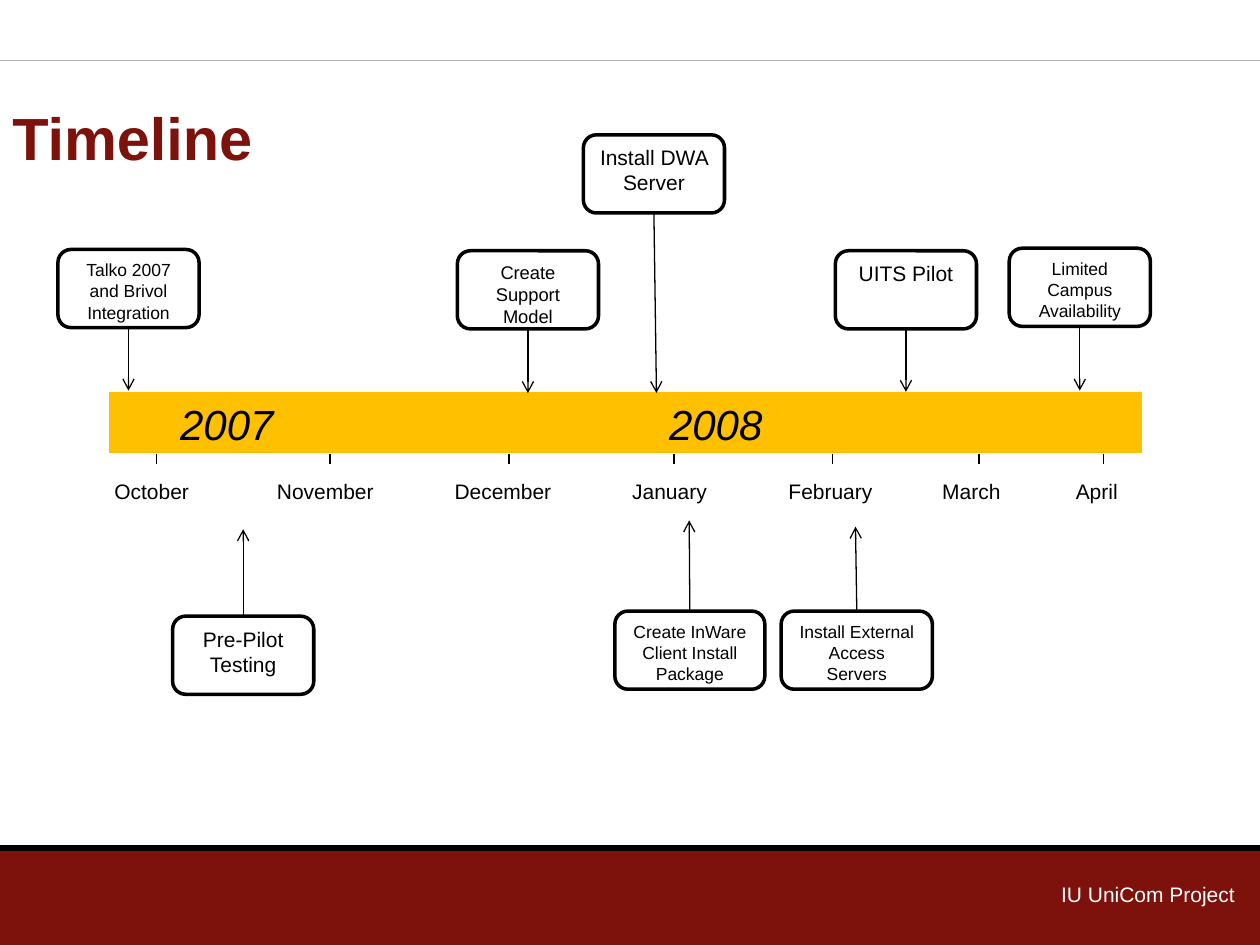
"""Build a project timeline slide on a grid of 100 columns by 75 rows."""
from lxml import etree
from pptx import Presentation
from pptx import util as u
from pptx.dml.color import RGBColor
from pptx.enum import shapes, text
from pptx.oxml.ns import qn

INK = {"maroon": "7D110C", "gold": "FFC000", "black": "000000",
       "white": "FFFFFF", "grey": "B0B2B4"}
WIDE, HIGH = u.Inches(10), u.Inches(7.5)
CELL = WIDE // 100
BOX_W, BOX_H, BAND_TOP, BAND_H = 11.2, 6.2, 31.1, 4.9
ALIGN, ANCHOR = text.PP_ALIGN, text.MSO_ANCHOR
KIND = shapes.MSO_SHAPE

# left, top, width, text size, arrow tip (column, row), lines
CALLS = [
    (4.6, 19.8, BOX_W, 10, (10.2, 31), ["Talko 2007 and Brivol Integration"]),
    (36.3, 19.9, BOX_W, 10.5, (41.9, 31.2), ["Create Support Model"]),
    (46.3, 10.7, BOX_W, 12, (52.1, 31.2), ["Install DWA Server"]),
    (80.1, 19.7, BOX_W, 10, (85.7, 31), ["Limited Campus Availability"]),
    (66.3, 19.9, BOX_W, 12, (71.9, 31.1), ["UITS Pilot"]),
    (13.7, 48.9, BOX_W, 12, (19.3, 42), ["Pre-Pilot", "Testing"]),
    (62, 48.5, 12, 10, (67.9, 41.8), ["Install External", "Access Servers"]),
    (48.8, 48.5, 11.9, 10, (54.7, 41.3),
     ["Create InWare", "Client Install", "Package"]),
]
MONTHS = ["October", "November", "December", "January", "February", "March", "April"]
STOPS = [12.9, 27, 41.1, 53.5, 65.7, 76.3]
TICKS = [12.4, 26.2, 40.4, 53.5, 66.1, 77.7, 87.6]


def cells(*nums):
    """Turn grid counts into lengths."""
    return [u.Emu(round(n * CELL)) for n in nums]


def tint(name):
    """Return a named colour."""
    return RGBColor.from_string(INK[name])


def write(shape, lines, size, color="black", align=ALIGN.LEFT,
          anchor=ANCHOR.TOP, stops=(), bold=False, slant=False):
    """Fill a shape with paragraphs of one style."""
    frame = shape.text_frame
    frame.word_wrap = True
    frame.vertical_anchor = anchor
    for i, line in enumerate(lines):
        para = frame.add_paragraph() if i else frame.paragraphs[0]
        para.alignment = align
        if stops:
            tabs = etree.SubElement(para._p.get_or_add_pPr(), qn("a:tabLst"))
            for pos in cells(*stops):
                etree.SubElement(tabs, qn("a:tab"), pos=str(pos), algn="l")
        run = para.add_run()
        run.text = line
        font = run.font
        font.name, font.size = "Arial", u.Pt(size)
        font.bold, font.italic = bold, slant
        font.color.rgb = tint(color)


def block(slide, kind, at, fill, edge=None, width=0.75):
    """Add a filled shape with an optional outline."""
    shape = slide.shapes.add_shape(kind, *cells(*at))
    shape.shadow.inherit = False
    shape.fill.solid()
    shape.fill.fore_color.rgb = tint(fill)
    if edge:
        shape.line.color.rgb = tint(edge)
        shape.line.width = u.Pt(width)
    else:
        shape.line.fill.background()
    return shape


def rule(slide, start, end, color="black", width=0.75, arrow=False):
    """Add a straight line, with an arrowhead at its end if asked."""
    line = slide.shapes.add_connector(
        shapes.MSO_CONNECTOR.STRAIGHT, *cells(*start, *end))
    line.line.color.rgb = tint(color)
    line.line.width = u.Pt(width)
    if arrow:
        etree.SubElement(line.line._get_or_add_ln(), qn("a:tailEnd"), type="arrow")
    etree.SubElement(line._element.spPr, qn("a:effectLst"))
    return line


def label(slide, at, line, size, **style):
    """Add a text box of one line."""
    write(slide.shapes.add_textbox(*cells(*at)), [line], size, **style)


def call(slide, left, top, wide, size, tip, lines):
    """Add a rounded box joined to an arrow that points at the timeline."""
    box = block(slide, KIND.ROUNDED_RECTANGLE, (left, top, wide, BOX_H),
                "white", "black", 2)
    write(box, lines, size, align=ALIGN.CENTER)
    below = top < BAND_TOP
    start = (left + wide / 2, top + BOX_H * below)
    rule(slide, start, tip, arrow=True).begin_connect(box, 2 if below else 0)


def axis(slide):
    """Add the year band, the month names and the ticks."""
    band = block(slide, KIND.RECTANGLE, (8.6, BAND_TOP, 82.1, BAND_H),
                 "gold", "white")
    band.text_frame.margin_left = cells(5.7)[0]
    write(band, ["2007\t2008"], 24, stops=[38.8], slant=True)
    names = block(slide, KIND.RECTANGLE, (8.1, 37.5, 83.6, 3), "white", "white", 2)
    write(names, ["\t".join(MONTHS)], 12, stops=STOPS)
    low = BAND_TOP + BAND_H
    for col in TICKS:
        rule(slide, (col, low), (col, low + 0.8))


def main():
    """Build and save the slide."""
    deck = Presentation()
    deck.slide_width, deck.slide_height = WIDE, HIGH
    slide = deck.slides.add_slide(deck.slide_layouts[6])
    block(slide, KIND.RECTANGLE, (0, 67.5, 100, 7.5), "maroon")
    rule(slide, (0, 4.8), (100, 4.8), "grey")
    rule(slide, (0, 67.3), (100, 67.3), width=3.75)
    axis(slide)
    for item in CALLS:
        call(slide, *item)
    label(slide, (0, 4.6, 77.8, 12.5), "Timeline", 34, color="maroon",
          anchor=ANCHOR.MIDDLE, bold=True)
    label(slide, (44.8, 69.5, 54.2, 3.3), "IU UniCom Project", 12,
          color="white", align=ALIGN.RIGHT)
    deck.save("out.pptx")


if __name__ == "__main__":
    main()
